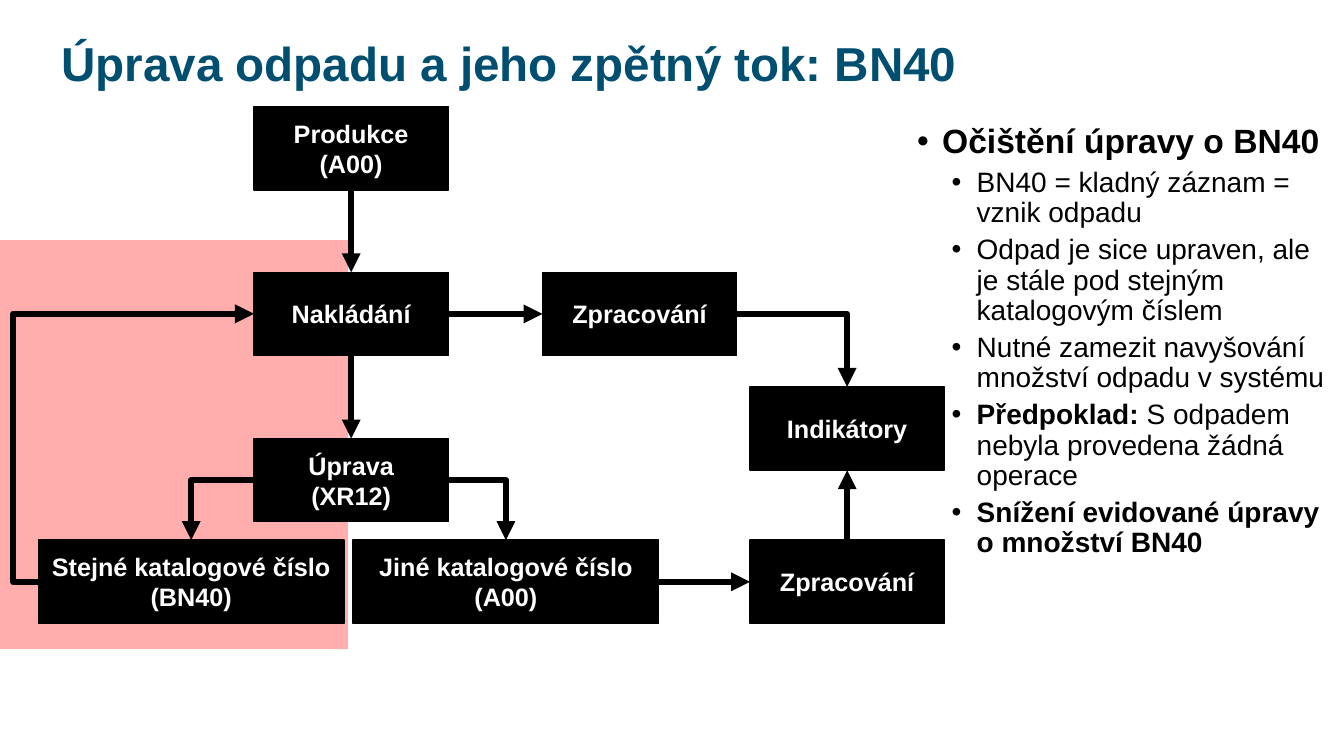
from dataclasses import dataclass

from lxml.etree import SubElement
from pptx import Presentation
from pptx.dml.color import RGBColor
from pptx.enum.shapes import MSO_CONNECTOR, MSO_SHAPE
from pptx.enum.text import MSO_ANCHOR, MSO_AUTO_SIZE, PP_ALIGN
from pptx.oxml.ns import qn
from pptx.shapes.autoshape import Shape
from pptx.slide import Slide
from pptx.text.text import Font
from pptx.util import Cm, Pt

FONT = "Arial"
BLACK, WHITE, TEAL, RED = "000000", "FFFFFF", "004F71", "FF0000"
BOX_HEIGHT = 2.1
NARROW, WIDE = 4.9, 7.7
TOP, LEFT, BOTTOM, RIGHT = range(4)  # connection sites of a rectangle
FLOW_LEFT, INDICATOR_LEFT = 6.4, 18.9
HANDLING_TOP, OUTPUT_TOP = 6.86, 13.61


@dataclass(frozen=True)
class Step:
    key: str
    text: str
    left: float
    top: float
    width: float = NARROW


@dataclass(frozen=True)
class Arrow:
    start: str
    start_site: int
    end: str
    end_site: int
    preset: str = "line"
    bend: int | None = None


@dataclass(frozen=True)
class Bullet:
    bold_text: str = ""
    plain_text: str = ""
    level: int = 1


@dataclass(frozen=True)
class BulletStyle:
    size: int
    margin: float
    space_before: int


STEPS = [
    Step("production", "Produkce\n(A00)", FLOW_LEFT, 2.69),
    Step("treatment", "Úprava\n(XR12)", FLOW_LEFT, 11.05),
    Step("same", "Stejné katalogové číslo\n(BN40)", 0.97, OUTPUT_TOP, WIDE),
    Step("other", "Jiné katalogové číslo\n(A00)", 8.9, OUTPUT_TOP, WIDE),
    Step("handling", "Nakládání", FLOW_LEFT, HANDLING_TOP),
    Step("processing", "Zpracování", 13.67, HANDLING_TOP),
    Step("indicators", "Indikátory", INDICATOR_LEFT, 9.75),
    Step("final", "Zpracování", INDICATOR_LEFT, OUTPUT_TOP),
]

ARROWS = [
    Arrow("same", LEFT, "handling", LEFT, "bentConnector3", -11700),
    Arrow("treatment", LEFT, "same", TOP, "bentConnector2"),
    Arrow("treatment", RIGHT, "other", TOP, "bentConnector2"),
    Arrow("handling", BOTTOM, "treatment", TOP),
    Arrow("production", BOTTOM, "handling", TOP),
    Arrow("handling", RIGHT, "processing", LEFT),
    Arrow("processing", RIGHT, "indicators", TOP, "bentConnector2"),
    Arrow("other", RIGHT, "final", LEFT),
    Arrow("final", TOP, "indicators", BOTTOM),
]

BULLETS = [
    Bullet("Očištění úpravy o BN40", level=0),
    Bullet(plain_text="BN40 = kladný záznam = vznik odpadu"),
    Bullet(plain_text="Odpad je sice upraven, ale je stále pod stejným katalogovým číslem"),
    Bullet(plain_text="Nutné zamezit navyšování množství odpadu v systému"),
    Bullet("Předpoklad: ", "S odpadem nebyla provedena žádná operace"),
    Bullet("Snížení evidované úpravy o množství BN40"),
]
BULLET_STYLES = [BulletStyle(24, 0.63, 0), BulletStyle(20, 1.5, 5)]


def color(value: str) -> RGBColor:
    return RGBColor.from_string(value)


def format_font(font: Font, size: int, value: str, bold: bool = True) -> None:
    font.name = FONT
    font.size = Pt(size)
    font.bold = bold
    font.color.rgb = color(value)


def place(shape: Shape, left: float, top: float, width: float, height: float) -> None:
    shape.left, shape.top = Cm(left), Cm(top)
    shape.width, shape.height = Cm(width), Cm(height)


def add_rectangle(page: Slide, left: float, top: float, width: float,
                  height: float, fill: str) -> Shape:
    box = page.shapes.add_shape(MSO_SHAPE.RECTANGLE, Cm(left), Cm(top), Cm(width), Cm(height))
    box.shadow.inherit = False
    box.fill.solid()
    box.fill.fore_color.rgb = color(fill)
    return box


def add_loop_area(page: Slide) -> None:
    """Shade the part of the flow that returns waste to handling."""
    area = add_rectangle(page, 0, 6.05, 8.77, 10.31, RED)
    area.line.fill.background()
    fill_color = area.fill._xPr.find(qn("a:solidFill"))[0]
    SubElement(fill_color, qn("a:alpha"), val="32000")


def add_step(page: Slide, step: Step) -> Shape:
    box = add_rectangle(page, step.left, step.top, step.width, BOX_HEIGHT, BLACK)
    box.line.color.rgb = color(BLACK)
    box.line.width = Pt(1)
    frame = box.text_frame
    frame.word_wrap = True
    frame.vertical_anchor = MSO_ANCHOR.MIDDLE
    frame.text = step.text
    for para in frame.paragraphs:
        para.alignment = PP_ALIGN.CENTER
        format_font(para.runs[0].font, 18, WHITE)
    return box


def add_arrow(page: Slide, arrow: Arrow, boxes: dict[str, Shape]) -> None:
    kind = MSO_CONNECTOR.STRAIGHT if arrow.preset == "line" else MSO_CONNECTOR.ELBOW
    connector = page.shapes.add_connector(kind, 0, 0, 0, 0)
    connector.begin_connect(boxes[arrow.start], arrow.start_site)
    connector.end_connect(boxes[arrow.end], arrow.end_site)
    connector.line.color.rgb = color(BLACK)
    connector.line.width = Pt(4.5)
    properties = connector._element.spPr
    geometry = properties.find(qn("a:prstGeom"))
    geometry.set("prst", arrow.preset)
    if arrow.bend is not None:
        SubElement(geometry.find(qn("a:avLst")), qn("a:gd"),
                   name="adj1", fmla=f"val {arrow.bend}")
    SubElement(properties.find(qn("a:ln")), qn("a:tailEnd"), type="triangle")
    SubElement(properties, qn("a:effectLst"))


def fill_title(title: Shape) -> None:
    place(title, 1.3, 0, 31.27, 3.35)
    frame = title.text_frame
    frame.text = "Úprava odpadu a jeho zpětný tok: BN40"
    frame.vertical_anchor = MSO_ANCHOR.MIDDLE
    frame.auto_size = MSO_AUTO_SIZE.NONE
    para = frame.paragraphs[0]
    para.alignment = PP_ALIGN.LEFT
    para.line_spacing = 0.9
    format_font(para.runs[0].font, 34, TEAL)


def fill_bullets(body: Shape) -> None:
    place(body, 22.86, 3.02, 11, 14.15)
    frame = body.text_frame
    frame.auto_size = MSO_AUTO_SIZE.NONE
    for index, bullet in enumerate(BULLETS):
        style = BULLET_STYLES[bullet.level]
        para = frame.add_paragraph() if index else frame.paragraphs[0]
        para.level = bullet.level
        para.line_spacing = 0.9
        para.space_before = Pt(style.space_before)
        properties = para._p.get_or_add_pPr()
        properties.set("marL", str(Cm(style.margin)))
        properties.set("indent", str(-Cm(0.63)))
        SubElement(properties, qn("a:buFont"), typeface=FONT)
        SubElement(properties, qn("a:buChar"), char="•")
        for text, bold in ((bullet.bold_text, True), (bullet.plain_text, False)):
            if text:
                span = para.add_run()
                span.text = text
                format_font(span.font, style.size, BLACK, bold)


def main() -> None:
    deck = Presentation()
    deck.slide_width, deck.slide_height = Cm(33.87), Cm(19.05)
    page = deck.slides.add_slide(deck.slide_layouts[1])
    fill_title(page.shapes.title)
    fill_bullets(page.placeholders[1])
    add_loop_area(page)
    boxes = {step.key: add_step(page, step) for step in STEPS}
    for arrow in ARROWS:
        add_arrow(page, arrow, boxes)
    deck.save("out.pptx")


if __name__ == "__main__":
    main()
